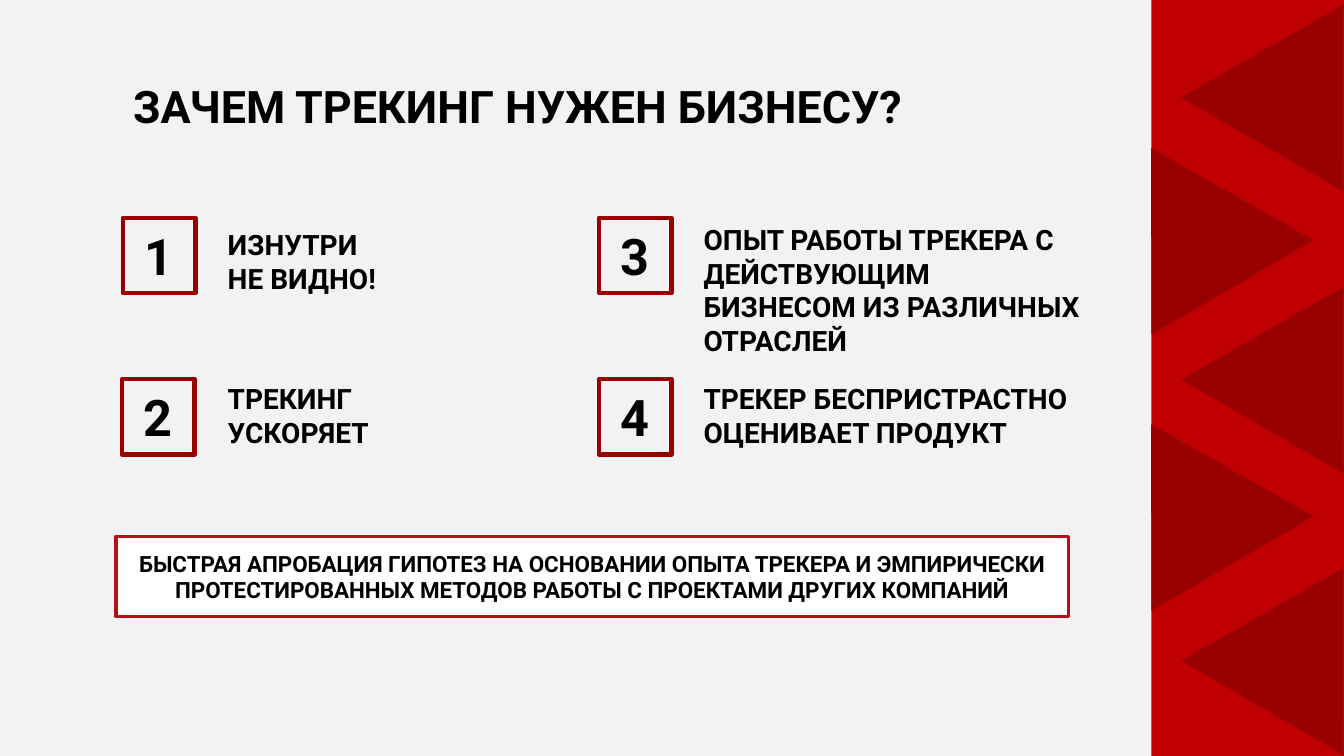
import dataclasses

import pptx
import pptx.dml.color
import pptx.enum.shapes
import pptx.enum.text
import pptx.util

Inches = pptx.util.Inches
Pt = pptx.util.Pt
MSO_SHAPE = pptx.enum.shapes.MSO_SHAPE
PP_ALIGN = pptx.enum.text.PP_ALIGN
MSO_ANCHOR = pptx.enum.text.MSO_ANCHOR
MSO_AUTO_SIZE = pptx.enum.text.MSO_AUTO_SIZE


@dataclasses.dataclass(frozen=True)
class Theme:
    font: str = "Roboto"
    background: str = "F2F2F2"
    text: str = "000000"
    white: str = "FFFFFF"
    red: str = "C00000"
    dark_red: str = "990000"
    banner_line: str = "B31115"
    title_size: int = 32
    number_size: int = 36
    item_size: int = 20
    banner_size: int = 16


def rgb(value):
    return pptx.dml.color.RGBColor.from_string(value)


class SlideBuilder:
    def __init__(self, slide, theme):
        self.slide = slide
        self.theme = theme
        fill = slide.background.fill
        fill.solid()
        fill.fore_color.rgb = rgb(theme.background)

    def set_text(self, sp, text, size, align=PP_ALIGN.LEFT, anchor=MSO_ANCHOR.TOP):
        tf = sp.text_frame
        tf.text = text
        tf.word_wrap = True
        tf.vertical_anchor = anchor
        for p in tf.paragraphs:
            p.alignment = align
            for r in p.runs:
                r.font.name = self.theme.font
                r.font.size = Pt(size)
                r.font.bold = True
                r.font.color.rgb = rgb(self.theme.text)

    def title(self, text, left, top, width, height):
        sp = self.slide.shapes.title
        sp.left, sp.top = Inches(left), Inches(top)
        sp.width, sp.height = Inches(width), Inches(height)
        self.set_text(sp, text, self.theme.title_size)
        sp.text_frame.auto_size = MSO_AUTO_SIZE.SHAPE_TO_FIT_TEXT

    def label(self, text, left, top, width, height):
        sp = self.slide.shapes.add_textbox(
            Inches(left), Inches(top), Inches(width), Inches(height))
        self.set_text(sp, text, self.theme.item_size)
        sp.text_frame.auto_size = MSO_AUTO_SIZE.SHAPE_TO_FIT_TEXT

    def shape(self, kind, left, top, width, height, fill=None, line=None, weight=0):
        sp = self.slide.shapes.add_shape(
            kind, Inches(left), Inches(top), Inches(width), Inches(height))
        sp.shadow.inherit = False
        if fill:
            sp.fill.solid()
            sp.fill.fore_color.rgb = rgb(fill)
        else:
            sp.fill.background()
        if line:
            sp.line.color.rgb = rgb(line)
            sp.line.width = Pt(weight)
        else:
            sp.line.fill.background()
        return sp

    def number(self, value, left, top):
        sp = self.shape(MSO_SHAPE.RECTANGLE, left, top, 0.72, 0.75,
                        line=self.theme.dark_red, weight=3)
        self.set_text(sp, str(value), self.theme.number_size,
                      PP_ALIGN.CENTER, MSO_ANCHOR.MIDDLE)

    def banner(self, text, left, top, width, height):
        sp = self.shape(MSO_SHAPE.RECTANGLE, left, top, width, height,
                        self.theme.white, self.theme.banner_line, 2.25)
        self.set_text(sp, text, self.theme.banner_size,
                      PP_ALIGN.CENTER, MSO_ANCHOR.MIDDLE)

    def triangle(self, left, top, rotation):
        sp = self.shape(MSO_SHAPE.ISOSCELES_TRIANGLE, left, top, 1.86, 1.6,
                        self.theme.dark_red)
        sp.rotation = rotation


def main():
    prs = pptx.Presentation()
    prs.slide_width, prs.slide_height = Inches(13.33), Inches(7.5)
    theme = Theme()
    s = SlideBuilder(prs.slides.add_slide(prs.slide_layouts[5]), theme)

    s.title("ЗАЧЕМ ТРЕКИНГ НУЖЕН БИЗНЕСУ?", 1.22, 0.73, 8.73, 0.64)

    items = [
        ("ИЗНУТРИ\nНЕ ВИДНО!", 1.22, 2.16, 2.21, 0.77),
        ("ТРЕКИНГ УСКОРЯЕТ", 1.21, 3.76, 3.74, 0.77),
        ("ОПЫТ РАБОТЫ ТРЕКЕРА С ДЕЙСТВУЮЩИМ БИЗНЕСОМ ИЗ РАЗЛИЧНЫХ ОТРАСЛЕЙ",
         5.94, 2.16, 2.16, 1.11),
        ("ТРЕКЕР БЕСПРИСТРАСТНО ОЦЕНИВАЕТ ПРОДУКТ", 5.94, 3.76, 3.74, 0.77),
    ]
    columns = [(2.16, 1.91), (6.88, 3.94)]
    for i, (text, box_left, box_top, text_top, height) in enumerate(items):
        text_left, width = columns[i // 2]
        s.number(i + 1, box_left, box_top)
        s.label(text, text_left, text_top, width, height)

    s.banner("БЫСТРАЯ АПРОБАЦИЯ ГИПОТЕЗ НА ОСНОВАНИИ ОПЫТА ТРЕКЕРА И ЭМПИРИЧЕСКИ "
             "ПРОТЕСТИРОВАННЫХ МЕТОДОВ РАБОТЫ С ПРОЕКТАМИ ДРУГИХ КОМПАНИЙ",
             1.15, 5.32, 9.45, 0.8)

    s.shape(MSO_SHAPE.RECTANGLE, 11.42, 0, 1.91, 7.5, theme.red)
    for i, top in enumerate([-0.06, 1.36, 2.74, 4.1, 5.53]):
        left, rotation = [(11.99, 30.1), (10.89, 329.7)][i % 2]
        s.triangle(left, top, rotation)

    prs.save("out.pptx")


if __name__ == "__main__":
    main()
